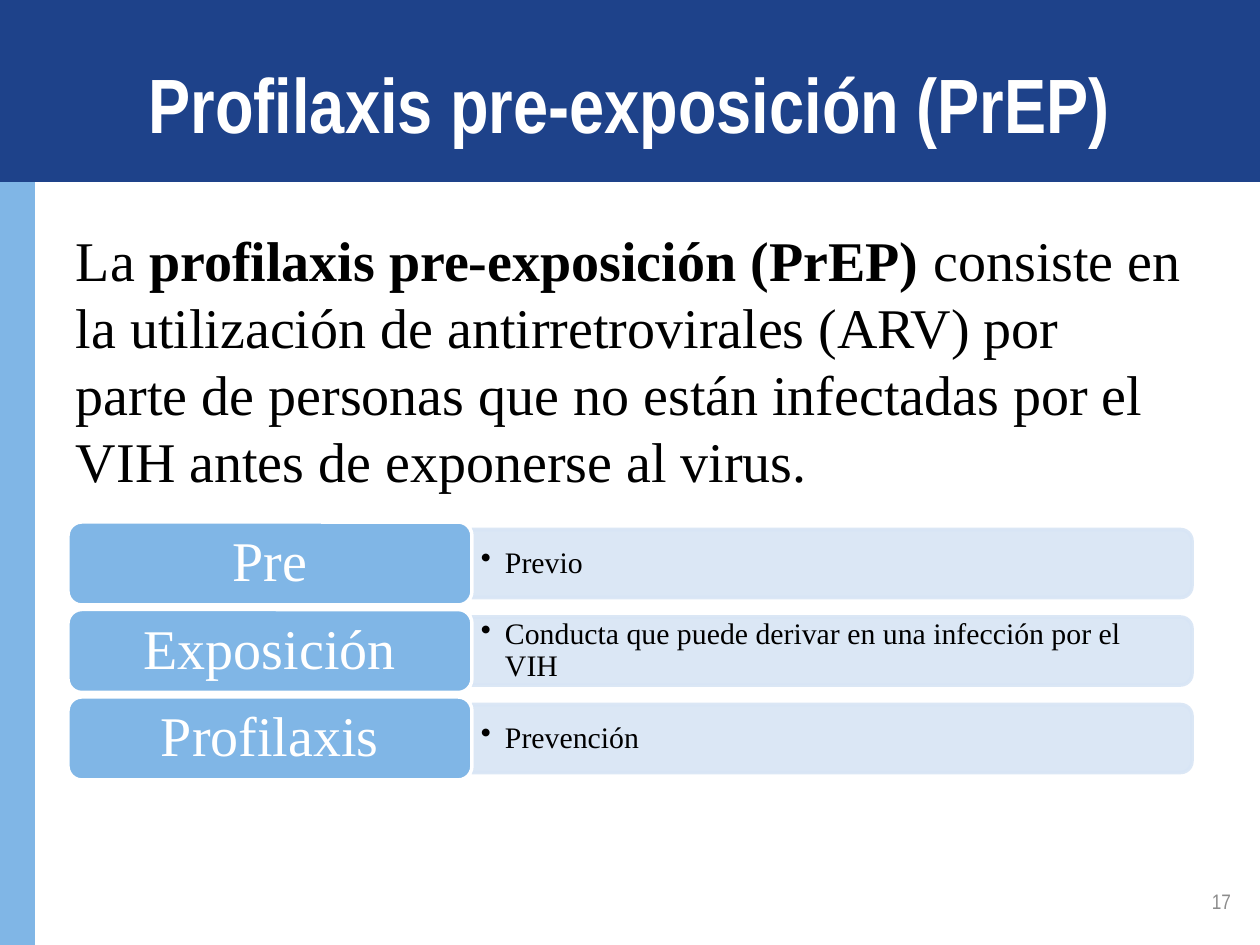
import pptx
import pptx.dml.color
import pptx.enum.shapes
import pptx.enum.text
import pptx.oxml
import pptx.oxml.ns
import pptx.util

SHAPES = pptx.enum.shapes.MSO_SHAPE
ALIGN = pptx.enum.text.PP_ALIGN
ANCHOR = pptx.enum.text.MSO_ANCHOR
Pt = pptx.util.Pt

COLORS = {
    "navy": "1E428A", "sky": "80B6E6", "pale": "D8E5F5",
    "white": "FFFFFF", "black": "000000", "gray": "8C8C8C",
}
SANS, SERIF = "Arial Narrow", "Times New Roman"

TITLE = "Profilaxis pre-exposición (PrEP)"
DEFINITION = [
    ("La ", False),
    ("profilaxis pre-exposición (PrEP)", True),
    (" consiste en la utilización de antirretrovirales (ARV) por parte de "
     "personas que no están infectadas por el VIH antes de exponerse al virus.", False),
]
TERMS = [
    ("Pre", "Previo"),
    ("Exposición", "Conducta que puede derivar en una infección por el VIH"),
    ("Profilaxis", "Prevención"),
]
PAGE_NUMBER = "17"

EMU_PER_PX = 914400 // 126
SLIDE_SIZE = (1260, 945)
TERM_LEFT, TERM_TOP, TERM_WIDTH, TERM_HEIGHT = 68, 522, 404, 83
TERMS_BOTTOM = 780
BAR_WIDTH, BAR_HEIGHT, BAR_TEXT_HEIGHT = 720, 68, 60


def px(value):
    return round(value * EMU_PER_PX)


def rgb(name):
    return pptx.dml.color.RGBColor.from_string(COLORS[name])


def set_alpha(color_format_parent, percent):
    """Make every solid colour below the element partly transparent."""
    for color in color_format_parent.iter(pptx.oxml.ns.qn("a:srgbClr")):
        alpha = color.makeelement(pptx.oxml.ns.qn("a:alpha"), {"val": str(percent * 1000)})
        color.append(alpha)


def add_box(kind, left, top, width, height, fill, line=None):
    shape = slide.shapes.add_shape(kind, px(left), px(top), px(width), px(height))
    shape.shadow.inherit = False
    shape.fill.solid()
    shape.fill.fore_color.rgb = rgb(fill)
    if line:
        shape.line.color.rgb = rgb(line)
        shape.line.width = Pt(2)
    else:
        shape.line.fill.background()
    return shape


def write(shape, runs, font, size, color, align=ALIGN.LEFT, anchor=ANCHOR.MIDDLE, margins=(13, 6)):
    """Fill a shape with one paragraph of (text, bold) runs and return it."""
    frame = shape.text_frame
    frame.word_wrap = True
    frame.vertical_anchor = anchor
    frame.margin_left = frame.margin_right = px(margins[0])
    frame.margin_top = frame.margin_bottom = px(margins[1])
    paragraph = frame.paragraphs[0]
    paragraph.alignment = align
    for text, bold in runs:
        run = paragraph.add_run()
        run.text = text
        run.font.name = font
        run.font.size = Pt(size)
        run.font.bold = bold
        run.font.color.rgb = rgb(color)
    return paragraph


def add_text(left, top, width, height, *args, **options):
    box = slide.shapes.add_textbox(px(left), px(top), px(width), px(height))
    return write(box, *args, **options)


def add_bullet(paragraph, indent):
    properties = paragraph._p.get_or_add_pPr()
    properties.set("marL", str(px(indent)))
    properties.set("indent", str(-px(indent)))
    bullet = properties.makeelement(pptx.oxml.ns.qn("a:buChar"), {"char": "•"})
    properties.append(bullet)


def add_term(top, term, meaning):
    middle = top + TERM_HEIGHT / 2
    bar_left = TERM_LEFT + TERM_WIDTH
    # The bar is an upright shape turned a quarter, so its sides are swapped.
    bar = add_box(SHAPES.ROUND_2_SAME_RECTANGLE,
                  bar_left + (BAR_WIDTH - BAR_HEIGHT) / 2, middle - BAR_WIDTH / 2,
                  BAR_HEIGHT, BAR_WIDTH, "pale", "pale")
    bar.rotation = 90
    set_alpha(bar._element.spPr, 90)
    paragraph = add_text(bar_left, middle - BAR_TEXT_HEIGHT / 2, BAR_WIDTH - 4, BAR_TEXT_HEIGHT,
                         [(meaning, False)], SERIF, 17, "black", margins=(9, 5))
    paragraph.line_spacing = 0.9
    add_bullet(paragraph, 24)
    label = add_box(SHAPES.ROUNDED_RECTANGLE, TERM_LEFT, top, TERM_WIDTH, TERM_HEIGHT,
                    "sky", "white")
    paragraph = write(label, [(term, False)], SERIF, 32, "white", ALIGN.CENTER, margins=(16, 8))
    paragraph.line_spacing = 0.9


presentation = pptx.Presentation()
presentation.slide_width, presentation.slide_height = map(px, SLIDE_SIZE)
slide = presentation.slides.add_slide(presentation.slide_layouts[6])

add_box(SHAPES.RECTANGLE, 0, 165, 35, 780, "sky")
add_box(SHAPES.RECTANGLE, 0, 0, 1260, 182, "navy")
add_text(63, 44, 1134, 118, [(TITLE, True)], SANS, 44, "white", ALIGN.CENTER)
definition = add_text(63, 219, 1134, 674, DEFINITION, SERIF, 32, "black", anchor=ANCHOR.TOP)
definition.space_before = Pt(6)

pitch = (TERMS_BOTTOM - TERM_TOP - TERM_HEIGHT) / (len(TERMS) - 1)
for index, (term, meaning) in enumerate(TERMS):
    add_term(TERM_TOP + index * pitch, term, meaning)

add_text(950, 876, 294, 50, [(PAGE_NUMBER, False)], SANS, 12, "gray", ALIGN.RIGHT)

presentation.save("out.pptx")
